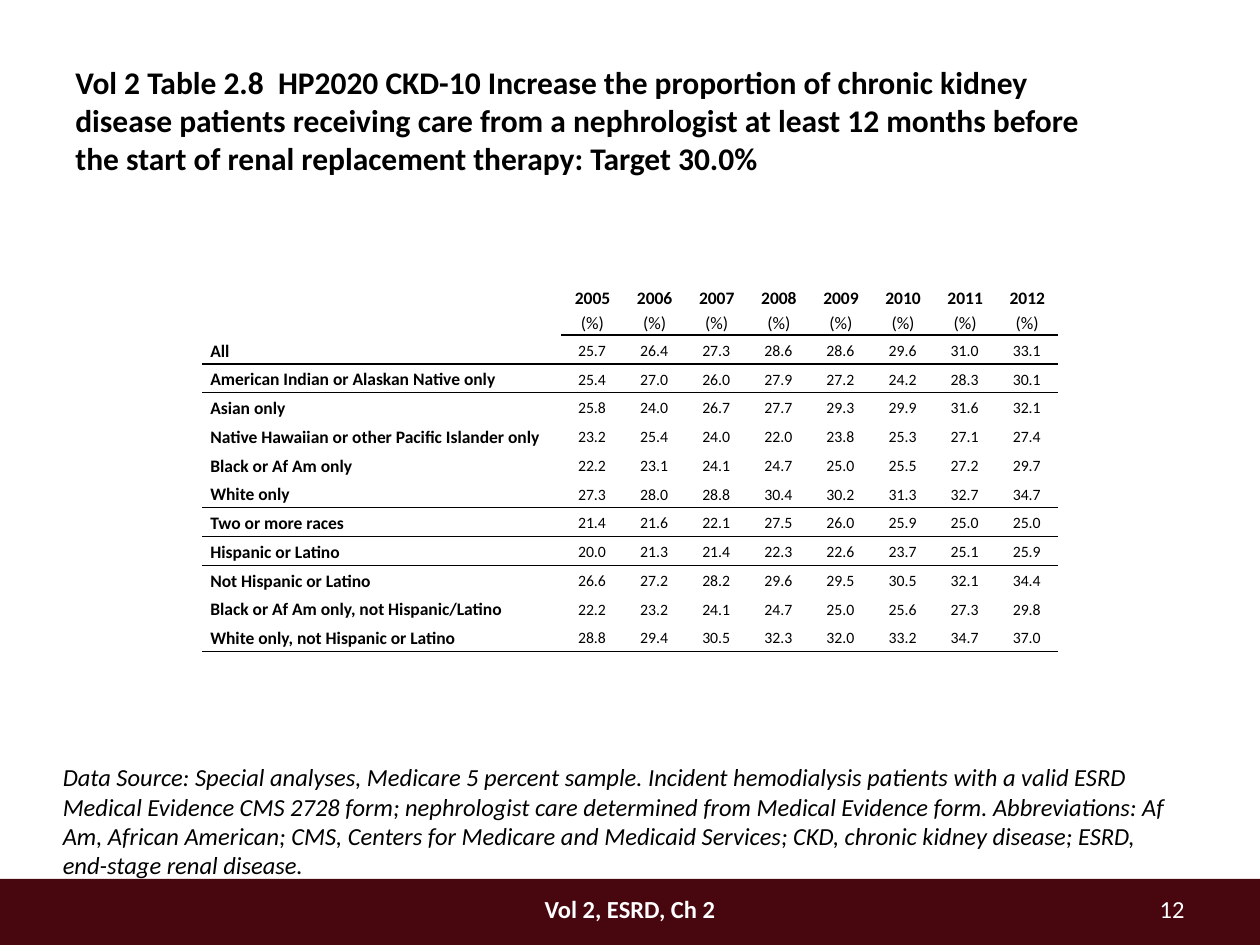
from dataclasses import dataclass
from lxml.etree import SubElement
from pptx import Presentation
from pptx.dml.color import RGBColor
from pptx.enum.shapes import MSO_SHAPE
from pptx.enum.text import MSO_ANCHOR, PP_ALIGN
from pptx.oxml.ns import qn
from pptx.util import Inches, Pt


@dataclass(frozen=True)
class Theme:
    font: str = "Calibri"
    ink: str = "000000"
    pale: str = "FFFFFF"
    band: str = "48070E"
    title: int = 18
    body: int = 14
    label: int = 10
    value: int = 9
    rule: int = 1


@dataclass(frozen=True)
class Box:
    left: int
    top: int
    width: int
    height: int

    def inner(self, x, y, w, h):
        return Box(
            self.left + round(self.width * x),
            self.top + round(self.height * y),
            round(self.width * w),
            round(self.height * h),
        )

    def spot(self):
        return self.left, self.top, self.width, self.height


THEME = Theme()
NO_GRID = "{2D5ABB26-0587-4C30-8999-92F81FD0307C}"
TITLE = (
    "Vol 2 Table 2.8  HP2020 CKD-10 Increase the proportion of chronic kidney "
    "disease patients receiving care from a nephrologist at least 12 months before "
    "the start of renal replacement therapy: Target 30.0%"
)
NOTE = (
    "Data Source: Special analyses, Medicare 5 percent sample. Incident hemodialysis "
    "patients with a valid ESRD Medical Evidence CMS 2728 form; nephrologist care "
    "determined from Medical Evidence form. Abbreviations: Af Am, African American; "
    "CMS, Centers for Medicare and Medicaid Services; CKD, chronic kidney disease; "
    "ESRD, end-stage renal disease."
)
YEARS = range(2005, 2013)
RATES = [
    ("All", (25.7, 26.4, 27.3, 28.6, 28.6, 29.6, 31.0, 33.1)),
    ("American Indian or Alaskan Native only", (25.4, 27.0, 26.0, 27.9, 27.2, 24.2, 28.3, 30.1)),
    ("Asian only", (25.8, 24.0, 26.7, 27.7, 29.3, 29.9, 31.6, 32.1)),
    ("Native Hawaiian or other Pacific Islander only", (23.2, 25.4, 24.0, 22.0, 23.8, 25.3, 27.1, 27.4)),
    ("Black or Af Am only", (22.2, 23.1, 24.1, 24.7, 25.0, 25.5, 27.2, 29.7)),
    ("White only", (27.3, 28.0, 28.8, 30.4, 30.2, 31.3, 32.7, 34.7)),
    ("Two or more races", (21.4, 21.6, 22.1, 27.5, 26.0, 25.9, 25.0, 25.0)),
    ("Hispanic or Latino", (20.0, 21.3, 21.4, 22.3, 22.6, 23.7, 25.1, 25.9)),
    ("Not Hispanic or Latino", (26.6, 27.2, 28.2, 29.6, 29.5, 30.5, 32.1, 34.4)),
    ("Black or Af Am only, not Hispanic/Latino", (22.2, 23.2, 24.1, 24.7, 25.0, 25.6, 27.3, 29.8)),
    ("White only, not Hispanic or Latino", (28.8, 29.4, 30.5, 32.3, 32.0, 33.2, 34.7, 37.0)),
]
RULED = {0, 1, 6, 7, 11}


def style(para, size, color=THEME.ink, align=PP_ALIGN.LEFT, bold=False, italic=False):
    para.alignment = align
    font = para.font
    font.name = THEME.font
    font.size = Pt(size)
    font.color.rgb = RGBColor.from_string(color)
    font.bold = bold
    font.italic = italic


def add_text(slide, box, text, size, **look):
    frame = slide.shapes.add_textbox(*box.spot()).text_frame
    frame.word_wrap = True
    frame.text = text
    style(frame.paragraphs[0], size, **look)


def add_rule(cell, side):
    line = SubElement(cell._tc.get_or_add_tcPr(), qn(f"a:{side}"), w=str(Pt(THEME.rule)))
    fill = SubElement(line, qn("a:solidFill"))
    SubElement(fill, qn("a:srgbClr"), val=THEME.ink)


def fill_cell(cell, row, col):
    inset = (0.02, 0.14) if row and col else (0.07, 0.07)
    cell.margin_left, cell.margin_right = map(Inches, inset)
    cell.margin_top = cell.margin_bottom = 0
    cell.vertical_anchor = MSO_ANCHOR.MIDDLE
    if row - 1 in RULED and (row > 1 or col):
        add_rule(cell, "lnT")
    if row in RULED and (row or col):
        add_rule(cell, "lnB")
    cell.fill.background()
    if not row and not col:
        return
    frame = cell.text_frame
    if not row:
        frame.text = f"{YEARS[col - 1]}\n(%)"
        for para, bold in zip(frame.paragraphs, (True, False)):
            style(para, THEME.label, align=PP_ALIGN.CENTER, bold=bold)
    elif not col:
        frame.text = RATES[row - 1][0]
        style(frame.paragraphs[0], THEME.label, bold=True)
    else:
        frame.text = f"{RATES[row - 1][1][col - 1]:.1f}"
        style(frame.paragraphs[0], THEME.value, align=PP_ALIGN.RIGHT)
    for para in frame.paragraphs:
        para.line_spacing = 1.15


def add_rates(slide, box):
    rows, cols = len(RATES) + 1, len(YEARS) + 1
    table = slide.shapes.add_table(rows, cols, *box.spot()).table
    table.first_row = table.horz_banding = False
    table._tbl.tblPr.find(qn("a:tableStyleId")).text = NO_GRID
    label, head = 0.42, 0.14
    for col in range(cols):
        share = (1 - label) / len(YEARS) if col else label
        table.columns[col].width = round(box.width * share)
    for row in range(rows):
        share = (1 - head) / len(RATES) if row else head
        table.rows[row].height = round(box.height * share)
        for col in range(cols):
            fill_cell(table.cell(row, col), row, col)


def add_foot(slide, box):
    band = slide.shapes.add_shape(MSO_SHAPE.RECTANGLE, *box.spot())
    band.shadow.inherit = False
    band.fill.solid()
    band.fill.fore_color.rgb = RGBColor.from_string(THEME.band)
    band.line.fill.background()
    add_text(slide, box.inner(0.39, 0.14, 0.22, 0.6), "Vol 2, ESRD, Ch 2", THEME.body,
             color=THEME.pale, align=PP_ALIGN.CENTER, bold=True)
    add_text(slide, box.inner(0.85, 0.14, 0.1, 0.6), "12", THEME.body,
             color=THEME.pale, align=PP_ALIGN.RIGHT)


def add_page(deck):
    slide = deck.slides.add_slide(deck.slide_layouts[6])
    page = Box(0, 0, deck.slide_width, deck.slide_height)
    add_foot(slide, page.inner(0, 0.93, 1, 0.07))
    add_text(slide, page.inner(0.05, 0.06, 0.84, 0.14), TITLE, THEME.title, bold=True)
    add_rates(slide, page.inner(0.16, 0.3, 0.68, 0.39))
    add_text(slide, page.inner(0.04, 0.8, 0.91, 0.11), NOTE, THEME.body, italic=True)


def main():
    deck = Presentation()
    deck.slide_width, deck.slide_height = Inches(10), Inches(7.5)
    add_page(deck)
    deck.save("out.pptx")


if __name__ == "__main__":
    main()
